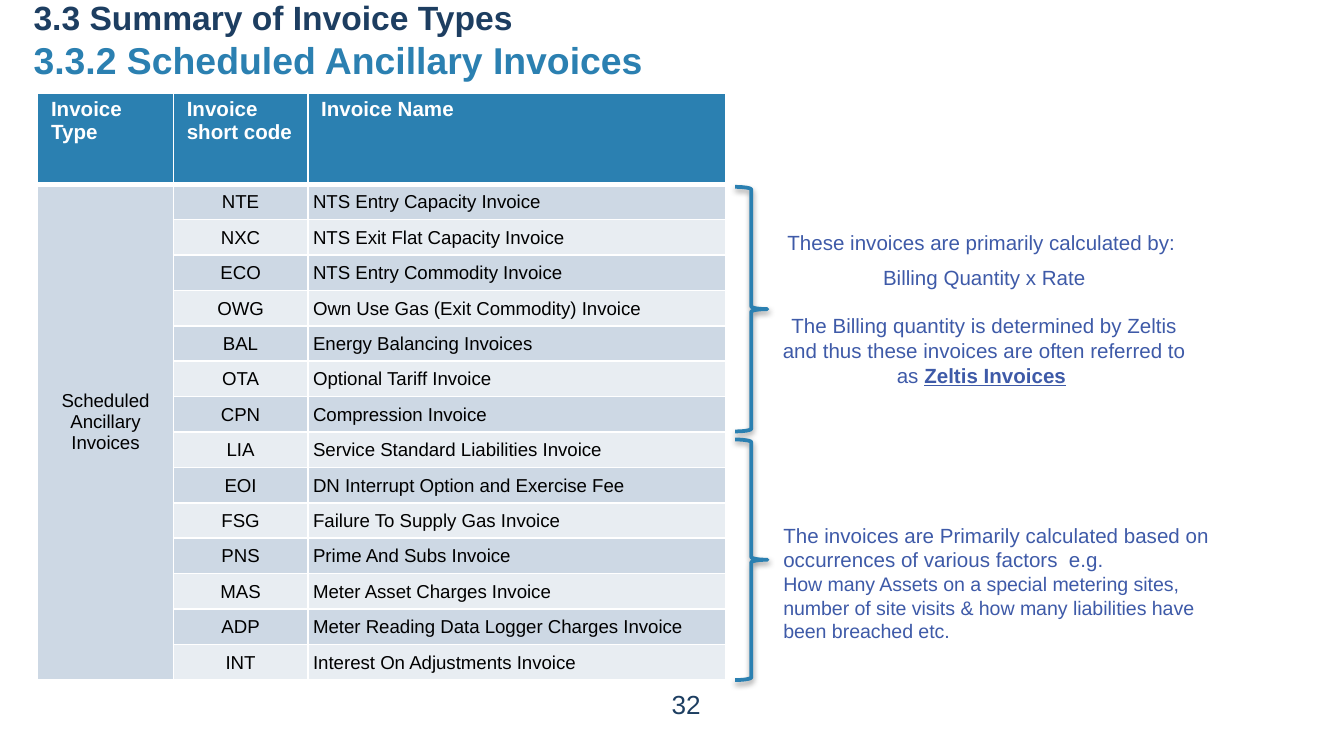
"""Build the slide on scheduled ancillary invoices."""
from lxml import etree
from pptx import Presentation
from pptx.dml.color import RGBColor
from pptx.enum.shapes import MSO_SHAPE
from pptx.enum.text import MSO_ANCHOR, PP_ALIGN
from pptx.oxml import parse_xml
from pptx.oxml.ns import qn
from pptx.util import Inches, Pt

BRACE = MSO_SHAPE.RIGHT_BRACE
TOP, MID = MSO_ANCHOR.TOP, MSO_ANCHOR.MIDDLE
LEFT, CENTER = PP_ALIGN.LEFT, PP_ALIGN.CENTER
BLUE, NAVY, INK = "2B80B1", "1D3E61", "3E5AA8"
BLACK, WHITE = "000000", "FFFFFF"
BANDS = "CDD8E4", "E8EDF2"

TITLE = [("3.3 Summary of Invoice Types", 18, NAVY),
         ("3.3.2 Scheduled Ancillary Invoices", 20, BLUE)]
HEADS = ["Invoice Type", "Invoice short code", "Invoice Name"]
GROUP = "Scheduled Ancillary Invoices"
ROWS = [
    ("NTE", "NTS Entry Capacity Invoice"),
    ("NXC", "NTS Exit Flat Capacity Invoice"),
    ("ECO", "NTS Entry Commodity Invoice"),
    ("OWG", "Own Use Gas (Exit Commodity) Invoice"),
    ("BAL", "Energy Balancing Invoices"),
    ("OTA", "Optional Tariff Invoice"),
    ("CPN", "Compression Invoice"),
    ("LIA", "Service Standard Liabilities Invoice"),
    ("EOI", "DN Interrupt Option and Exercise Fee"),
    ("FSG", "Failure To Supply Gas Invoice"),
    ("PNS", "Prime And Subs Invoice"),
    ("MAS", "Meter Asset Charges Invoice"),
    ("ADP", "Meter Reading Data Logger Charges Invoice"),
    ("INT", "Interest On Adjustments Invoice"),
]
WIDE, HIGH = 10, 10 * 9 / 16
COLS = [1.01, 1, 3.11]
X, Y, TALL, HEAD = 0.28, 0.69, 4.37, 0.68
BRACES = [(1.39, 1.82), (3.27, 1.79)]
UPPER = [
    ("These invoices are primarily calculated by: ", 11, 0),
    ("Billing Quantity x Rate", 11, 5.5),
    ("The Billing quantity is determined by Zeltis and thus these "
     "invoices are often referred to as ", 11, 12.8),
]
TERM = "Zeltis Invoices"
LOWER = [
    ("The invoices are Primarily calculated based on occurrences of "
     "various factors  e.g.", 11, 0),
    ("How many Assets on a special metering sites, number of site visits "
     "& how many liabilities have been breached etc.", 10.5, 0),
]
PAD = (0.1, 0.05, 0.1, 0.05)
SHADOW = (
    '<a:effectLst xmlns:a="http://schemas.openxmlformats.org/drawingml/2006/main">'
    '<a:outerShdw blurRad="39400" dist="20300" dir="5400000" rotWithShape="0">'
    '<a:srgbClr val="000000"><a:alpha val="38000"/></a:srgbClr>'
    '</a:outerShdw></a:effectLst>')


def rgb(code):
    return RGBColor.from_string(code)


def style(font, size, color, bold=False):
    font.name, font.size, font.bold = "Arial", Pt(size), bold
    font.color.rgb = rgb(color)


def inset(item, pad):
    (item.margin_left, item.margin_top,
     item.margin_right, item.margin_bottom) = map(Inches, pad)


def add_box(slide, place, pad=PAD, anchor=TOP):
    frame = slide.shapes.add_textbox(*map(Inches, place)).text_frame
    frame.word_wrap, frame.vertical_anchor = True, anchor
    inset(frame, pad)
    return frame


def add_note(slide, place, lines, align):
    frame = add_box(slide, place)
    for i, (text, size, gap) in enumerate(lines):
        para = frame.add_paragraph() if i else frame.paragraphs[0]
        para.text, para.alignment = text, align
        if gap:
            para.space_before = Pt(gap)
        style(para.font, size, INK)
    return para


def add_edges(cell, low):
    props = cell._tc.get_or_add_tcPr()
    for side, width in zip("LRTB", (1, 1, 1, low)):
        line = etree.SubElement(props, qn("a:ln" + side), w=str(Pt(width)))
        fill = etree.SubElement(line, qn("a:solidFill"))
        etree.SubElement(fill, qn("a:srgbClr"), val=WHITE)


def fill_cell(cell, text, fill, color, size, pad, align, anchor=MID, low=1):
    add_edges(cell, low)
    cell.fill.solid()
    cell.fill.fore_color.rgb = rgb(fill)
    cell.vertical_anchor = anchor
    inset(cell, pad)
    para = cell.text_frame.paragraphs[0]
    para.text, para.alignment = text, align
    style(para.font, size, color, color == WHITE)


def add_grid(slide):
    place = map(Inches, (X, Y, sum(COLS), TALL))
    grid = slide.shapes.add_table(len(ROWS) + 1, len(COLS), *place).table
    for col, width in zip(grid.columns, COLS):
        col.width = Inches(width)
    for i, row in enumerate(grid.rows):
        row.height = Inches((TALL - HEAD) / len(ROWS) if i else HEAD)
    for c, head in enumerate(HEADS):
        fill_cell(grid.cell(0, c), head, BLUE, WHITE, 11,
                  (0.1, 0.04, 0.1, 0.04), LEFT, TOP, 3)
    for r, (code, name) in enumerate(ROWS, 1):
        band = BANDS[(r - 1) % 2]
        group = GROUP if r == 1 else ""
        fill_cell(grid.cell(r, 0), group, BANDS[0], BLACK, 10,
                  (0.1, 0.05, 0.1, 0.2), CENTER)
        fill_cell(grid.cell(r, 1), code, band, BLACK, 10,
                  (0.01, 0.01, 0.01, 0), CENTER)
        fill_cell(grid.cell(r, 2), name, band, BLACK, 10,
                  (0.04, 0.01, 0.01, 0), LEFT)
    grid.cell(1, 0).merge(grid.cell(len(ROWS), 0))


def add_brace(slide, top, high):
    place = map(Inches, (5.47, top, 0.24, high))
    brace = slide.shapes.add_shape(BRACE, *place)
    brace.fill.background()
    brace.line.color.rgb, brace.line.width = rgb(BLUE), Pt(2)
    brace._element.spPr.append(parse_xml(SHADOW))


def main():
    deck = Presentation()
    deck.slide_width, deck.slide_height = Inches(WIDE), Inches(HIGH)
    slide = deck.slides.add_slide(deck.slide_layouts[6])
    add_grid(slide)
    for top, high in BRACES:
        add_brace(slide, top, high)
    last = add_note(slide, (5.71, 1.66, 3.23, 1.28), UPPER, CENTER)
    run = last.add_run()
    run.text, run.font.bold, run.font.underline = TERM, True, True
    last.add_run().text = " "
    add_note(slide, (5.73, 3.84, 3.6, 1), LOWER, LEFT)
    para = add_box(slide, (0.25, -0.1, 9.5, 0.79), (0,) * 4, MID).paragraphs[0]
    for i, (text, size, color) in enumerate(TITLE):
        if i:
            para.add_line_break()
        run = para.add_run()
        run.text = text
        style(run.font, size, color, True)
    para = add_box(slide, (2.81, 5.17, 4.59, 0.14), PAD, MID).paragraphs[0]
    para.text, para.alignment = "32", CENTER
    style(para.font, 14, NAVY)
    deck.save("out.pptx")


if __name__ == "__main__":
    main()
